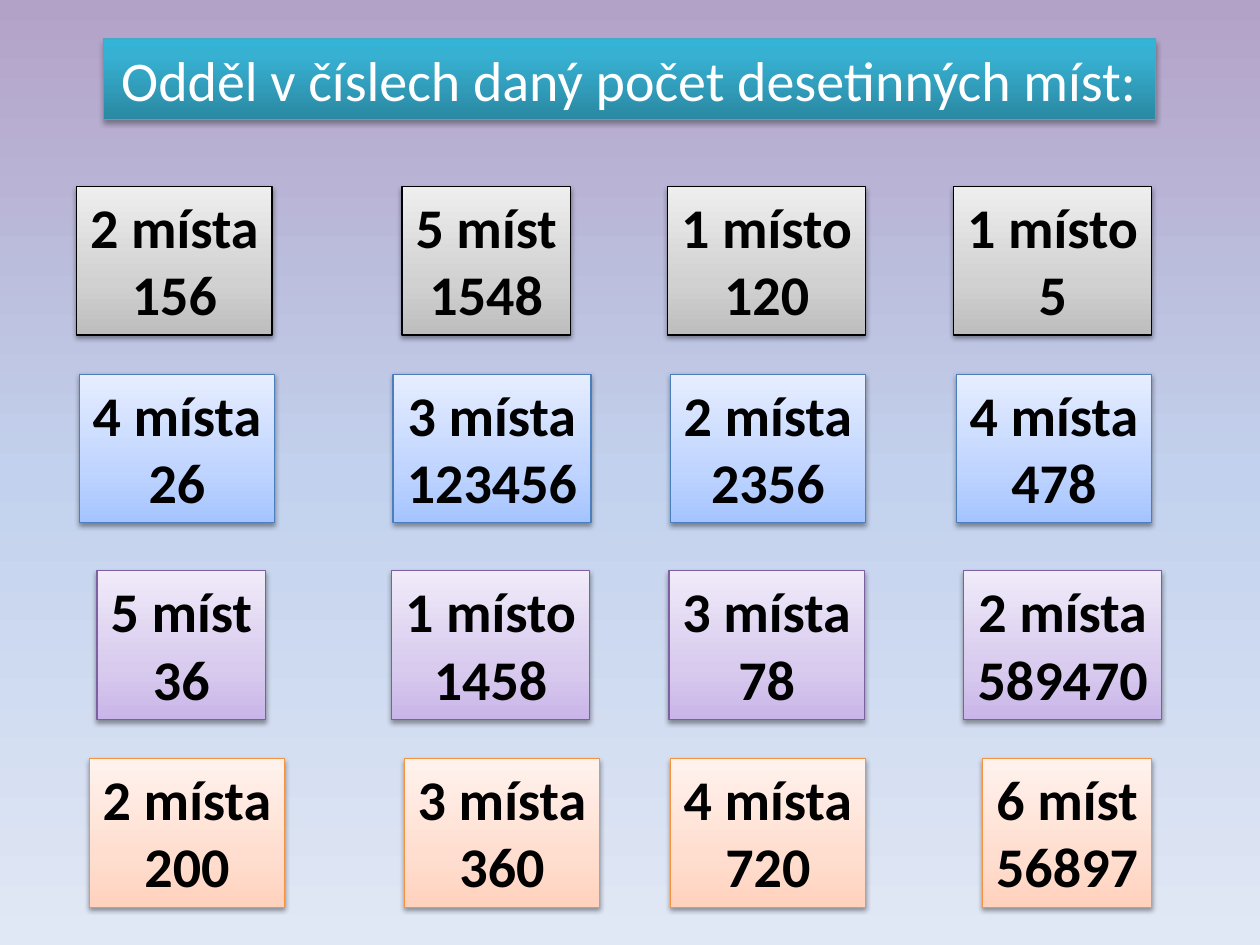
from dataclasses import dataclass

from pptx import Presentation
from pptx.dml.color import RGBColor
from pptx.enum.shapes import MSO_SHAPE as Shape
from pptx.enum.text import MSO_ANCHOR as Anchor, MSO_AUTO_SIZE as AutoSize, PP_ALIGN as Align
from pptx.oxml import parse_xml
from pptx.oxml.ns import nsdecls, qn
from pptx.util import Inches, Pt

UNIT = Inches(0.1)  # grid of 100 columns by 75 rows
CARD_HEIGHT = 11.8
FONT, SIZE = "Calibri", 32

COLORS = {"black": "000000", "white": "FFFFFF", "title_line": "46AAC5",
          "blue": "4B7EBC", "violet": "7D60A0", "orange": "F69240"}

# Gradient stops as position in percent and colour
Stops = dict[int, str]
BACKGROUND: Stops = {0: "B3A2C7", 50: "C2D1ED", 100: "E1E8F5"}
TITLE_FILL: Stops = {0: "2A88A2", 80: "37B1D2", 100: "34B4D6"}


@dataclass
class Box:
    text: str
    left: float
    top: float
    width: float
    height: float
    stops: Stops
    line: str
    font: str = "black"
    bold: bool = True
    shadow_alpha: int = 38
    shadow_dist: float = 1.6


@dataclass
class Card:
    places: str
    number: str
    left: float

    @property
    def width(self) -> float:
        """Width that the longer of the two lines needs."""
        if self.places.endswith("místo") or len(self.number) == 6:
            return 15.7
        return 15.5 if self.places.endswith("místa") else 13.4


@dataclass
class CardRow:
    top: float
    stops: Stops
    line: str
    cards: list[Card]


ROWS = [
    CardRow(14.8, {0: "BDBDBD", 35: "D1D1D1", 100: "EEEEEE"}, "black", [
        Card("2 místa", "156", 6.1), Card("5 míst", "1548", 31.9),
        Card("1 místo", "120", 53), Card("1 místo", "5", 75.7)]),
    CardRow(29.7, {0: "A4C4FF", 35: "BFD4FF", 100: "E6EEFF"}, "blue", [
        Card("4 místa", "26", 6.3), Card("3 místa", "123456", 31.2),
        Card("2 místa", "2356", 53.2), Card("4 místa", "478", 75.9)]),
    CardRow(45.3, {0: "C9B5E8", 35: "D8CBEE", 100: "F0EAF9"}, "violet", [
        Card("5 míst", "36", 7.7), Card("1 místo", "1458", 31.1),
        Card("3 místa", "78", 53.1), Card("2 místa", "589470", 76.5)]),
    CardRow(60.2, {0: "FFD2BD", 35: "FFDED0", 100: "FFF2ED"}, "orange", [
        Card("2 místa", "200", 7.1), Card("3 místa", "360", 32.1),
        Card("4 místa", "720", 53.2), Card("6 míst", "56897", 78)]),
]


def set_gradient(fill, parent, stops: Stops, angle: int) -> None:
    """Fill with a linear gradient; the angle runs counter-clockwise."""
    fill.gradient()
    fill.gradient_angle = angle
    stop_list = next(parent.iter(qn("a:gsLst")))
    for stop in list(stop_list):
        stop_list.remove(stop)
    for position, color in stops.items():
        stop_list.append(parse_xml(
            f'<a:gs {nsdecls("a")} pos="{position * 1000}"><a:srgbClr val="{color}"/></a:gs>'))


def set_shadow(sp, alpha: int, dist: float) -> None:
    """Drop a soft black shadow straight down."""
    sp.shadow.inherit = False
    effects = sp._element.spPr.find(qn("a:effectLst"))
    effects.append(parse_xml(
        f'<a:outerShdw {nsdecls("a")} blurRad="{Pt(3.1)}" dist="{Pt(dist)}" dir="5400000" '
        f'rotWithShape="0"><a:srgbClr val="{COLORS["black"]}">'
        f'<a:alpha val="{alpha * 1000}"/></a:srgbClr></a:outerShdw>'))


def draw_box(slide, box: Box) -> None:
    bounds = (round(n * UNIT) for n in (box.left, box.top, box.width, box.height))
    sp = slide.shapes.add_shape(Shape.RECTANGLE, *bounds)
    set_gradient(sp.fill, sp._element.spPr, box.stops, 90)
    sp.line.color.rgb = RGBColor.from_string(COLORS[box.line])
    sp.line.width = Pt(0.75)
    set_shadow(sp, box.shadow_alpha, box.shadow_dist)

    tf = sp.text_frame
    tf.text = box.text
    tf.word_wrap = False
    tf.auto_size = AutoSize.SHAPE_TO_FIT_TEXT
    tf.vertical_anchor = Anchor.TOP
    for p in tf.paragraphs:
        p.alignment = Align.CENTER
        for r in p.runs:
            r.font.name, r.font.size, r.font.bold = FONT, Pt(SIZE), box.bold
            r.font.color.rgb = RGBColor.from_string(COLORS[box.font])


def main() -> None:
    prs = Presentation()
    prs.slide_width, prs.slide_height = 100 * UNIT, 75 * UNIT
    slide = prs.slides.add_slide(prs.slide_layouts[6])
    set_gradient(slide.background.fill, slide._element, BACKGROUND, 270)

    # Title
    draw_box(slide, Box("Odděl v číslech daný počet desetinných míst:", 8.2, 3.1, 83.5, 6.4,
                        TITLE_FILL, "title_line", "white", False, 35, 1.8))

    # Exercise cards
    for row in ROWS:
        for card in row.cards:
            draw_box(slide, Box(f"{card.places}\n{card.number}", card.left, row.top,
                                card.width, CARD_HEIGHT, row.stops, row.line))

    prs.save("out.pptx")


if __name__ == "__main__":
    main()
